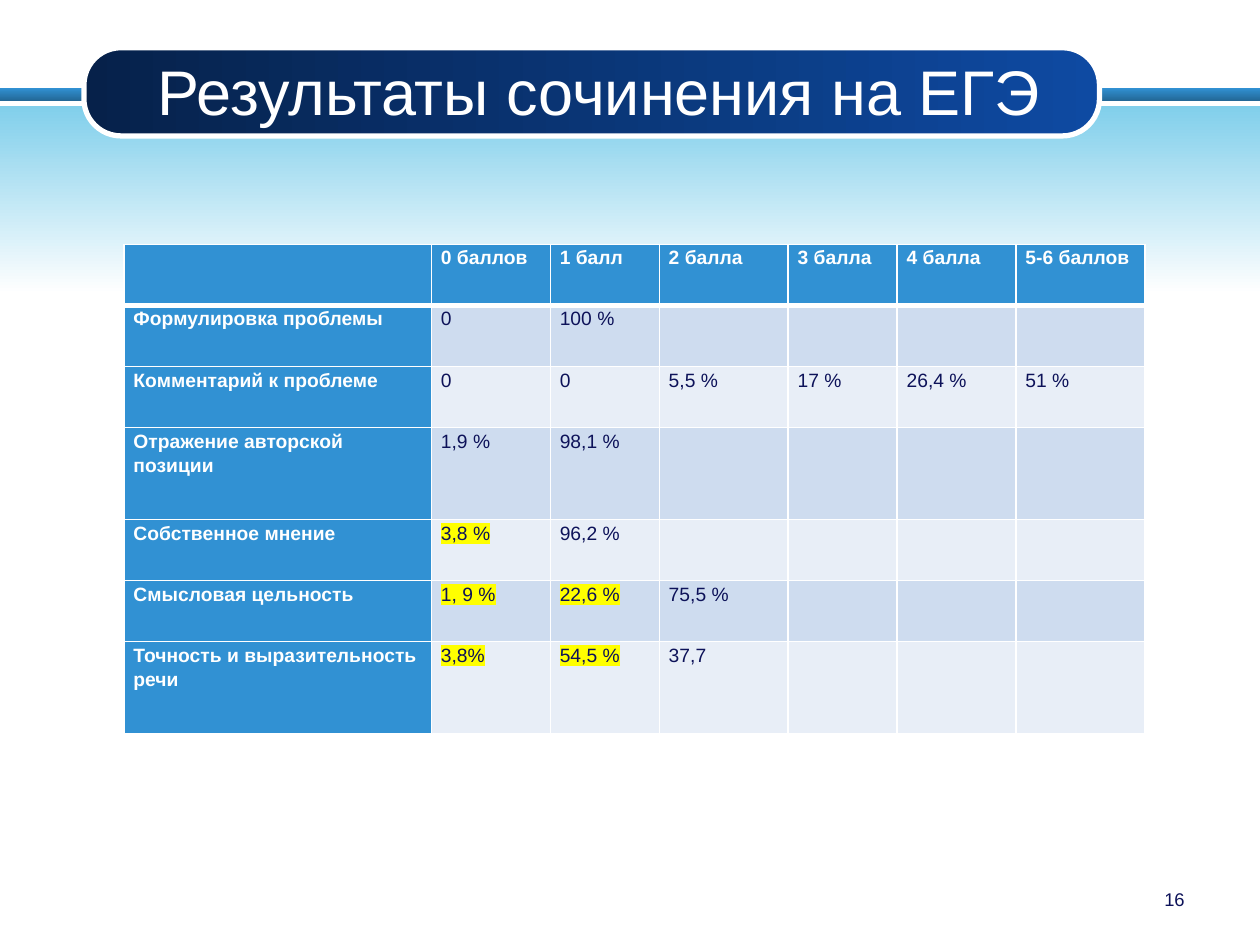
from pptx import Presentation
from pptx.dml.color import RGBColor
from pptx.enum.shapes import MSO_SHAPE
from pptx.enum.text import MSO_ANCHOR, PP_ALIGN
from pptx.oxml import parse_xml
from pptx.oxml.ns import nsdecls, qn
from pptx.util import Pt

WHITE, BLUE, NAVY, YELLOW = "FFFFFF", "3191D3", "0D1259", "FFFF00"
BANDS = ("CEDCEF", "E8EEF7")
COLS = (175.7, 67.9, 62.3, 73.7, 62.3, 67.9, 73.7)
LOW, TALL = 34.9, 52.6
HEAD = ("", "0 баллов", "1 балл", "2 балла", "3 балла", "4 балла", "5-6 баллов")
ROWS = (
    (LOW, HEAD),
    (LOW, ("Формулировка проблемы", "0", "100 %")),
    (LOW, ("Комментарий к проблеме", "0", "0", "5,5 %", "17 %", "26,4 %", "51 %")),
    (TALL, ("Отражение авторской позиции", "1,9 %", "98,1 %")),
    (LOW, ("Собственное мнение", "3,8 %", "96,2 %")),
    (LOW, ("Смысловая цельность", "1, 9 %", "22,6 %", "75,5 %")),
    (TALL, ("Точность и выразительность речи", "3,8%", "54,5 %", "37,7")),
)
MARKED = {(4, 1), (5, 1), (5, 2), (6, 1), (6, 2)}


def color(code):
    """Turn a hex string into a colour."""
    return RGBColor.from_string(code)


def style(para, size, code, bold=False):
    """Format every run of a paragraph."""
    for run in para.runs:
        font = run.font
        font.name, font.size, font.bold = "Arial", Pt(size), bold
        font.color.rgb = color(code)


def panel(slide, kind, box, codes, angle):
    """Add a borderless shape with a two-colour gradient."""
    shape = slide.shapes.add_shape(kind, *map(Pt, box))
    shape.shadow.inherit = False
    shape.line.fill.background()
    shape.fill.gradient()
    shape.fill.gradient_angle = angle
    for stop, code in zip(shape.fill.gradient_stops, codes):
        stop.color.rgb = color(code)
    return shape


def label(slide, box, text, size, code, align, anchor):
    """Add a one-paragraph text box."""
    frame = slide.shapes.add_textbox(*map(Pt, box)).text_frame
    frame.word_wrap = True
    frame.vertical_anchor = anchor
    frame.text = text
    para = frame.paragraphs[0]
    para.alignment = align
    style(para, size, code)


def border(cell, base):
    """Draw white lines round a cell, the lower one of the given width."""
    props = cell._tc.get_or_add_tcPr()
    for side, width in (("L", 1), ("R", 1), ("T", 1), ("B", base)):
        props.append(parse_xml(
            f'<a:ln{side} {nsdecls("a")} w="{Pt(width)}"><a:solidFill>'
            f'<a:srgbClr val="{WHITE}"/></a:solidFill></a:ln{side}>'))


def mark(run):
    """Highlight a run in yellow."""
    fill = run._r.get_or_add_rPr().find(qn("a:solidFill"))
    fill.addnext(parse_xml(
        f'<a:highlight {nsdecls("a")}><a:srgbClr val="{YELLOW}"/></a:highlight>'))


def write(cell, text, code, bold):
    """Put text into a table cell."""
    cell.margin_left = cell.margin_right = Pt(5.4)
    cell.margin_top = cell.margin_bottom = 0
    cell.text_frame.text = text
    para = cell.text_frame.paragraphs[0]
    para.line_spacing = 1.15
    style(para, 11, code, bold)


def grid(slide):
    """Add the table of results."""
    table = slide.shapes.add_table(
        len(ROWS), len(COLS), Pt(70.9), Pt(139.6),
        Pt(sum(COLS)), Pt(sum(high for high, _ in ROWS))).table
    table.first_col = True
    table.horz_banding = False
    for col, width in zip(table.columns, COLS):
        col.width = Pt(width)
    for i, (high, texts) in enumerate(ROWS):
        table.rows[i].height = Pt(high)
        for j in range(len(COLS)):
            cell = table.cell(i, j)
            head = i == 0 or j == 0
            border(cell, 3 if i == 0 else 1)
            cell.fill.solid()
            cell.fill.fore_color.rgb = color(BLUE if head else BANDS[(i - 1) % 2])
            if j < len(texts) and texts[j]:
                write(cell, texts[j], WHITE if head else NAVY, head)
            if (i, j) in MARKED:
                mark(cell.text_frame.paragraphs[0].runs[0])


def main():
    """Build and save the slide."""
    deck = Presentation()
    deck.slide_width, deck.slide_height = Pt(720), Pt(540)
    slide = deck.slides.add_slide(deck.slide_layouts[6])
    panel(slide, MSO_SHAPE.RECTANGLE, (0, 50.4, 720, 7.2), (BLUE, "236897"), 270)
    panel(slide, MSO_SHAPE.RECTANGLE, (0, 60.5, 720, 107.3), ("81CFEB", WHITE), 270)
    pill = panel(slide, MSO_SHAPE.ROUNDED_RECTANGLE, (48, 27.3, 580.3, 50.4),
                 ("06214A", "0E4AA2"), 0)
    pill.adjustments[0] = 0.42
    pill.line.color.rgb = color(WHITE)
    pill.line.width = Pt(3)
    label(slide, (66.2, 29.5, 552.2, 44.6), "Результаты сочинения на ЕГЭ",
          36, WHITE, PP_ALIGN.CENTER, MSO_ANCHOR.MIDDLE)
    grid(slide)
    label(slide, (516.2, 504, 167.8, 25.2), "16",
          10.5, NAVY, PP_ALIGN.RIGHT, MSO_ANCHOR.TOP)
    deck.save("out.pptx")


if __name__ == "__main__":
    main()
